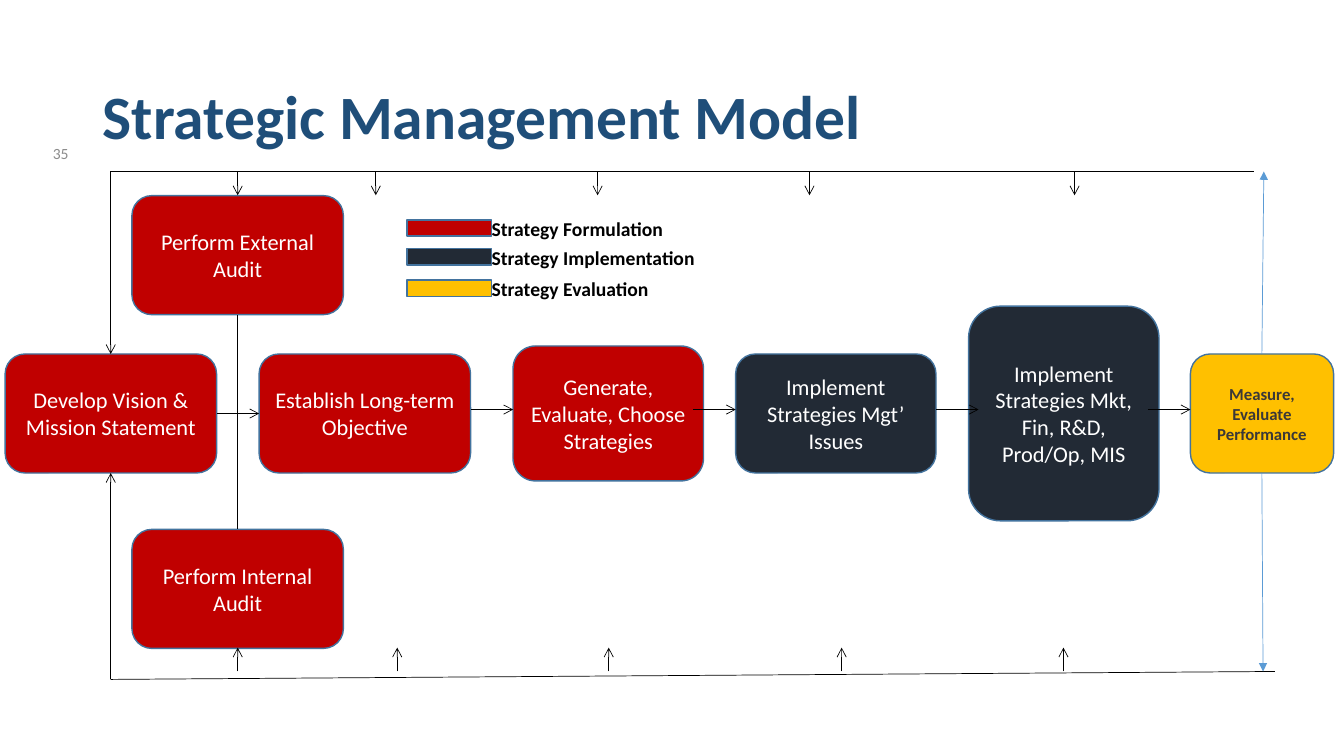
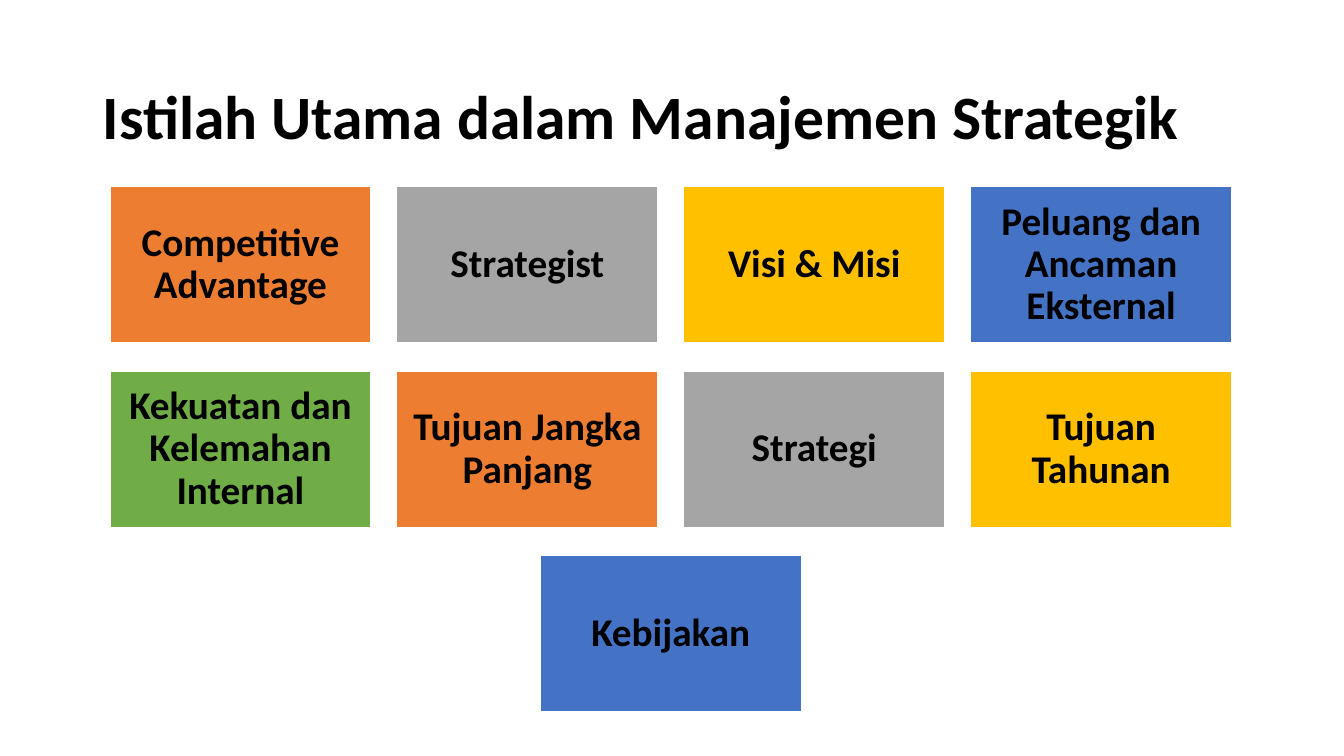
from itertools import cycle

from lxml import etree
from pptx import Presentation
from pptx.dml.color import RGBColor
from pptx.enum.shapes import MSO_CONNECTOR, MSO_SHAPE
from pptx.enum.text import MSO_ANCHOR, PP_ALIGN
from pptx.oxml.ns import qn
from pptx.util import Cm, Pt

RECT, ROUNDED = MSO_SHAPE.RECTANGLE, MSO_SHAPE.ROUNDED_RECTANGLE
STRAIGHT = MSO_CONNECTOR.STRAIGHT
TOP, MIDDLE = MSO_ANCHOR.TOP, MSO_ANCHOR.MIDDLE
LEFT, CENTER, RIGHT = PP_ALIGN.LEFT, PP_ALIGN.CENTER, PP_ALIGN.RIGHT

BLACK = RGBColor(0x00, 0x00, 0x00)
WHITE = RGBColor(0xFF, 0xFF, 0xFF)
NAVY = RGBColor(0x1F, 0x4E, 0x79)
RED = RGBColor(0xC0, 0x00, 0x00)
DARK = RGBColor(0x22, 0x2A, 0x35)
GOLD = RGBColor(0xFF, 0xC0, 0x00)
CHARCOAL = RGBColor(0x3B, 0x38, 0x38)
BORDER = RGBColor(0x43, 0x73, 0x9E)
SKY = RGBColor(0x5B, 0x9B, 0xD5)
NUMBER_GRAY = RGBColor(0x8C, 0x8C, 0x8C)
ORANGE = RGBColor(0xED, 0x7D, 0x31)
GRAY = RGBColor(0xA5, 0xA5, 0xA5)
BLUE = RGBColor(0x44, 0x72, 0xC4)
GREEN = RGBColor(0x70, 0xAD, 0x47)


class Deck:
    """Hold the presentation, its style and the current slide."""

    font = "Calibri"

    def __init__(self):
        self.prs = Presentation()
        self.prs.slide_width, self.prs.slide_height = Cm(33.87), Cm(19.05)

    def slide(self, title, color):
        self.s = self.prs.slides.add_slide(self.prs.slide_layouts[6])
        self.text(title, 2.34, 1.32, 29.21, 3.38, 44, color, True,
                  anchor=MIDDLE, spacing=0.9)

    def set_text(self, sp, text, size, color, bold, align, anchor, spacing):
        tf = sp.text_frame
        tf.vertical_anchor = anchor
        p = tf.paragraphs[0]
        p.text = text
        p.alignment = align
        p.line_spacing = spacing
        p.font.name = self.font
        p.font.size = Pt(size)
        p.font.bold = bold
        p.font.color.rgb = color
        return tf

    def text(self, text, x, y, w, h, size, color, bold=False, align=LEFT,
             anchor=TOP, spacing=1.0, wrap=True):
        sp = self.s.shapes.add_textbox(Cm(x), Cm(y), Cm(w), Cm(h))
        tf = self.set_text(sp, text, size, color, bold, align, anchor, spacing)
        tf.word_wrap = wrap

    def box(self, kind, x, y, w, h, fill, border=BORDER):
        sp = self.s.shapes.add_shape(kind, Cm(x), Cm(y), Cm(w), Cm(h))
        sp.shadow.inherit = False
        sp.fill.solid()
        sp.fill.fore_color.rgb = fill
        sp.line.color.rgb = border
        sp.line.width = Pt(1)
        return sp

    def step(self, text, x, middle, w, h, fill, size=16, color=WHITE, bold=False):
        sp = self.box(ROUNDED, x, middle - h / 2, w, h, fill)
        self.set_text(sp, text, size, color, bold, CENTER, MIDDLE, 1.0)

    def tile(self, text, x, y, w, h, fill):
        sp = self.box(RECT, x, y, w, h, fill, WHITE)
        tf = self.set_text(sp, text, 28, BLACK, True, CENTER, MIDDLE, 0.9)
        tf.margin_left = tf.margin_right = Cm(0.3)
        tf.margin_top = tf.margin_bottom = Cm(0.3)

    def line(self, x1, y1, x2, y2, head=None, color=BLACK):
        c = self.s.shapes.add_connector(STRAIGHT, Cm(x1), Cm(y1), Cm(x2), Cm(y2))
        c.line.color.rgb = color
        c.line.width = Pt(0.5)
        sp_pr = c._element.spPr
        if head:
            etree.SubElement(sp_pr.find(qn("a:ln")), qn("a:tailEnd"), type=head)
        etree.SubElement(sp_pr, qn("a:effectLst"))

    def legend(self, text, y, fill):
        self.box(RECT, 10.26, y, 2.13, 0.41, fill)
        self.text(text, 12.14, y - 0.2, 5.66, 0.86, 14, BLACK, True, wrap=False)


def model_slide(deck):
    deck.slide("Strategic Management Model", NAVY)
    middle, top, bottom = 10.42, 4.32, 16.92
    box_w, box_h = 5.33, 3
    audit_x, audit_mid = 5.99, (6.43, 14.84)
    box_top, box_bottom = middle - box_h / 2, middle + box_h / 2

    for text, x, w, h, fill in (
        ("Develop Vision & Mission Statement", 0.13, box_w, box_h, RED),
        ("Establish Long-term Objective", 6.53, box_w, box_h, RED),
        ("Generate, Evaluate, Choose Strategies", 12.93, 4.8, 3.4, RED),
        ("Implement Strategies Mgt’ Issues", 18.54, 5.05, box_h, DARK),
        ("Implement Strategies Mkt, Fin, R&D, Prod/Op, MIS", 24.41, 4.8, 5.41, DARK),
    ):
        deck.step(text, x, middle, w, h, fill)
    deck.step("Measure, Evaluate Performance", 30, middle, 3.61, box_h, GOLD,
              12, CHARCOAL, True)
    for name, mid in zip(("External", "Internal"), audit_mid):
        deck.step(f"Perform {name} Audit", audit_x - box_w / 2, mid, box_w, box_h, RED)

    deck.line(audit_x, audit_mid[0] + box_h / 2, audit_x, audit_mid[1] - box_h / 2)
    for x, y in ((6.53, middle), (12.93, 10.32), (18.54, 10.32),
                 (24.66, 10.32), (30, 10.32)):
        deck.line(x - 1.07, y, x, y, "arrow")

    left, corner = 2.79, 17.12
    deck.line(left, top, left, box_top, "arrow")
    deck.line(left, top, 31.6, top)
    deck.line(left, corner, left, box_bottom, "arrow")
    deck.line(left, corner, 32.13, bottom)
    for x in (audit_x, 9.47, 15.06, 20.4, 27.08):
        deck.line(x, top, x, top + 0.6, "arrow")
    for x in (audit_x, 10.01, 15.34, 21.21, 26.8):
        deck.line(x, bottom, x, bottom - 0.6, "arrow")

    for text, y, fill in (("Formulation", 5.54, RED),
                          ("Implementation", 6.27, DARK),
                          ("Evaluation", 7.06, GOLD)):
        deck.legend(f"Strategy {text}", y, fill)
    deck.text("35", 0, 3.53, 1.98, 0.69, 11.1, NUMBER_GRAY, align=RIGHT, anchor=MIDDLE)
    deck.line(31.8, box_top, 31.85, top, "triangle", SKY)
    deck.line(31.8, box_bottom, 31.83, bottom, "triangle", SKY)


def terms_slide(deck):
    deck.slide("Istilah Utama dalam Manajemen Strategik", BLACK)
    rows = (
        ("Competitive Advantage", "Strategist", "Visi & Misi",
         "Peluang dan Ancaman Eksternal"),
        ("Kekuatan dan Kelemahan Internal", "Tujuan Jangka Panjang",
         "Strategi", "Tujuan Tahunan"),
        ("Kebijakan",),
    )
    fills = cycle((ORANGE, GRAY, GOLD, BLUE, GREEN))
    w, h, gap = 6.58, 3.94, 0.71
    pitch_x, pitch_y = 7.23, h + gap
    for i, row in enumerate(rows):
        x0 = 2.77 + (len(rows[0]) - len(row)) * pitch_x / 2
        for j, text in enumerate(row):
            deck.tile(text, x0 + j * pitch_x, 4.7 + i * pitch_y, w, h, next(fills))


def main():
    deck = Deck()
    model_slide(deck)
    terms_slide(deck)
    deck.prs.save("out.pptx")


if __name__ == "__main__":
    main()
